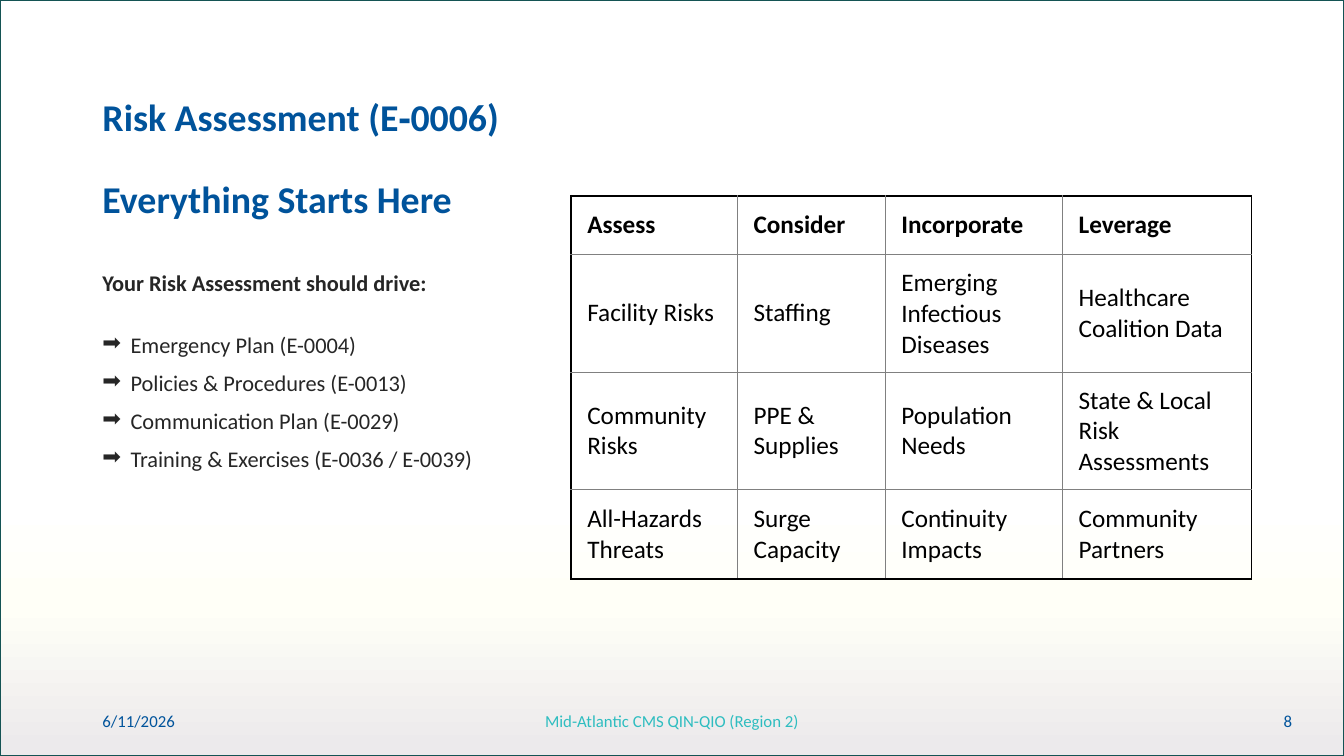
import lxml.etree
import pptx
import pptx.dml.color
import pptx.enum.shapes
import pptx.enum.text
import pptx.oxml.ns
import pptx.util

RGBColor = pptx.dml.color.RGBColor
ALIGN = pptx.enum.text.PP_ALIGN
ANCHOR = pptx.enum.text.MSO_ANCHOR
Pt = pptx.util.Pt
qn = pptx.oxml.ns.qn

WHITE = RGBColor(0xFF, 0xFF, 0xFF)
IVORY = RGBColor(0xFF, 0xFF, 0xF7)
MIST = RGBColor(0xEC, 0xEA, 0xEC)
PINE = RGBColor(0x14, 0x53, 0x54)
BLUE = RGBColor(0x00, 0x53, 0x9B)
TEAL = RGBColor(0x2E, 0xBD, 0xC0)
CHARCOAL = RGBColor(0x26, 0x26, 0x26)
BLACK = RGBColor(0x00, 0x00, 0x00)
GREY = RGBColor(0x80, 0x80, 0x80)

COLUMNS, ROWS = 16, 9

DRIVEN_PLANS = [
    "Emergency Plan (E-0004)",
    "Policies & Procedures (E-0013)",
    "Communication Plan (E-0029)",
    "Training & Exercises (E-0036 / E-0039)",
]
RISK_TABLE = [
    ["Assess", "Consider", "Incorporate", "Leverage"],
    ["Facility Risks", "Staffing", "Emerging Infectious Diseases", "Healthcare Coalition Data"],
    ["Community Risks", "PPE & Supplies", "Population Needs", "State & Local Risk Assessments"],
    ["All-Hazards Threats", "Surge Capacity", "Continuity Impacts", "Community Partners"],
]


def set_all(target, values):
    for name, value in values.items():
        setattr(target, name, value)


def add_xml(parent, tag, **attributes):
    return lxml.etree.SubElement(parent, qn(tag), attributes)


def add_solid(parent, color):
    add_xml(add_xml(parent, "a:solidFill"), "a:srgbClr", val=str(color))


class SlideBuilder:
    """Draws on one slide; lengths are columns and rows of a 16 by 9 grid."""

    font = "Calibri"

    def __init__(self, deck):
        self.column = deck.slide_width / COLUMNS
        self.row = deck.slide_height / ROWS
        self.slide = deck.slides.add_slide(deck.slide_layouts[5])

    def area(self, left, top, width, height):
        return [round(left * self.column), round(top * self.row),
                round(width * self.column), round(height * self.row)]

    def add_words(self, para, text, size, color, bold=False, **layout):
        set_all(para, layout)
        span = para.add_run()
        span.text = text
        set_all(span.font, {"name": self.font, "size": Pt(size), "bold": bold})
        span.font.color.rgb = color

    def backdrop(self, stops, line_color):
        panel = self.slide.shapes.add_shape(
            pptx.enum.shapes.MSO_SHAPE.RECTANGLE, *self.area(0, 0, COLUMNS, ROWS))
        panel.shadow.inherit = False
        panel.line.color.rgb = line_color
        panel.line.width = Pt(1.5)
        panel.fill.gradient()
        panel.fill.gradient_angle = 270
        stop_list = panel.element.spPr.find(qn("a:gradFill")).find(qn("a:gsLst"))
        for stop in list(stop_list):
            stop_list.remove(stop)
        for percent, color in stops:
            stop = add_xml(stop_list, "a:gs", pos=str(percent * 1000))
            add_xml(stop, "a:srgbClr", val=str(color))
        self.slide.shapes.element.insert(2, panel.element)

    def title(self, area, lines, gap):
        box = self.slide.shapes.title
        set_all(box, dict(zip(("left", "top", "width", "height"), self.area(*area))))
        frame = box.text_frame
        set_all(frame, {"word_wrap": True, "vertical_anchor": ANCHOR.BOTTOM,
                        "auto_size": pptx.enum.text.MSO_AUTO_SIZE.NONE})
        for index, line in enumerate(lines):
            para = frame.add_paragraph() if index else frame.paragraphs[0]
            self.add_words(para, line, 27, BLUE, bold=True, alignment=ALIGN.LEFT,
                           line_spacing=0.9, space_before=Pt(gap if index else 0))

    def text_box(self, area, anchor=ANCHOR.TOP):
        frame = self.slide.shapes.add_textbox(*self.area(*area)).text_frame
        set_all(frame, {"word_wrap": True, "vertical_anchor": anchor})
        return frame

    def arrow_list(self, area, heading, items):
        frame = self.text_box(area)
        self.add_words(frame.paragraphs[0], heading, 16, CHARCOAL, bold=True, line_spacing=0.9)
        for index, item in enumerate(items):
            para = frame.add_paragraph()
            indent = pptx.util.Inches(0.28)
            properties = para._p.get_or_add_pPr()
            properties.set("marL", str(indent))
            properties.set("indent", str(-indent))
            add_xml(properties, "a:buChar", char="➡")
            self.add_words(para, item, 16, CHARCOAL, line_spacing=0.9,
                           space_before=Pt(10 if index else 27))

    def footer(self, left, width, text, color, alignment):
        frame = self.text_box((left, 8.34, width, 0.48), ANCHOR.MIDDLE)
        self.add_words(frame.paragraphs[0], text, 12, color, alignment=alignment)

    def borders(self, cell, outer_sides):
        """Black lines on the outer sides of the table, thin grey ones elsewhere."""
        properties = cell._tc.get_or_add_tcPr()
        for index, side in enumerate("LRTB"):
            color, width = (BLACK, 1.5) if side in outer_sides else (GREY, 0.5)
            line = add_xml(properties, f"a:ln{side}", w=str(Pt(width)))
            add_solid(line, color)
            properties.insert(index, line)

    def table(self, left, top, widths, heights, texts):
        area = self.area(left, top, sum(widths), sum(heights))
        table = self.slide.shapes.add_table(len(heights), len(widths), *area).table
        set_all(table, {"first_row": False, "horz_banding": False})
        for column, width in zip(table.columns, widths):
            column.width = round(width * self.column)
        for row, height in zip(table.rows, heights):
            row.height = round(height * self.row)
        margins = {"margin_left": 0.16, "margin_top": 0.13,
                   "margin_right": 0.11, "margin_bottom": 0.13}
        cell_format = {name: pptx.util.Inches(value) for name, value in margins.items()}
        cell_format["vertical_anchor"] = ANCHOR.MIDDLE
        for r, row_texts in enumerate(texts):
            for c, text in enumerate(row_texts):
                cell = table.cell(r, c)
                set_all(cell, cell_format)
                cell.fill.background()
                edges = {"L": c == 0, "R": c == len(widths) - 1,
                         "T": r == 0, "B": r == len(heights) - 1}
                self.borders(cell, [side for side, outer in edges.items() if outer])
                self.add_words(cell.text_frame.paragraphs[0], text, 18, BLACK, bold=r == 0)


def main():
    deck = pptx.Presentation()
    deck.slide_width = pptx.util.Inches(13.33)
    deck.slide_height = pptx.util.Inches(7.5)
    page = SlideBuilder(deck)
    page.backdrop([(66, WHITE), (80, IVORY), (99, MIST)], PINE)
    page.title((1.1, 1.08, 5.16, 1.62),
               ["Risk Assessment (E‑0006)", "Everything Starts Here"], gap=29.5)
    page.arrow_list((1.1, 3.18, 5.16, 4.52),
                    "Your Risk Assessment should drive:", DRIVEN_PLANS)
    page.footer(1.1, 2.22, "6/11/2026", BLUE, ALIGN.LEFT)
    page.footer(5.3, 5.4, "Mid-Atlantic CMS QIN-QIO (Region 2)", TEAL, ALIGN.CENTER)
    page.footer(11.9, 3.6, "8", BLUE, ALIGN.RIGHT)
    page.table(6.8, 2.33, [1.98, 1.76, 2.11, 2.25], [0.7, 1.4, 1.4, 1.06], RISK_TABLE)
    deck.save("out.pptx")


if __name__ == "__main__":
    main()
